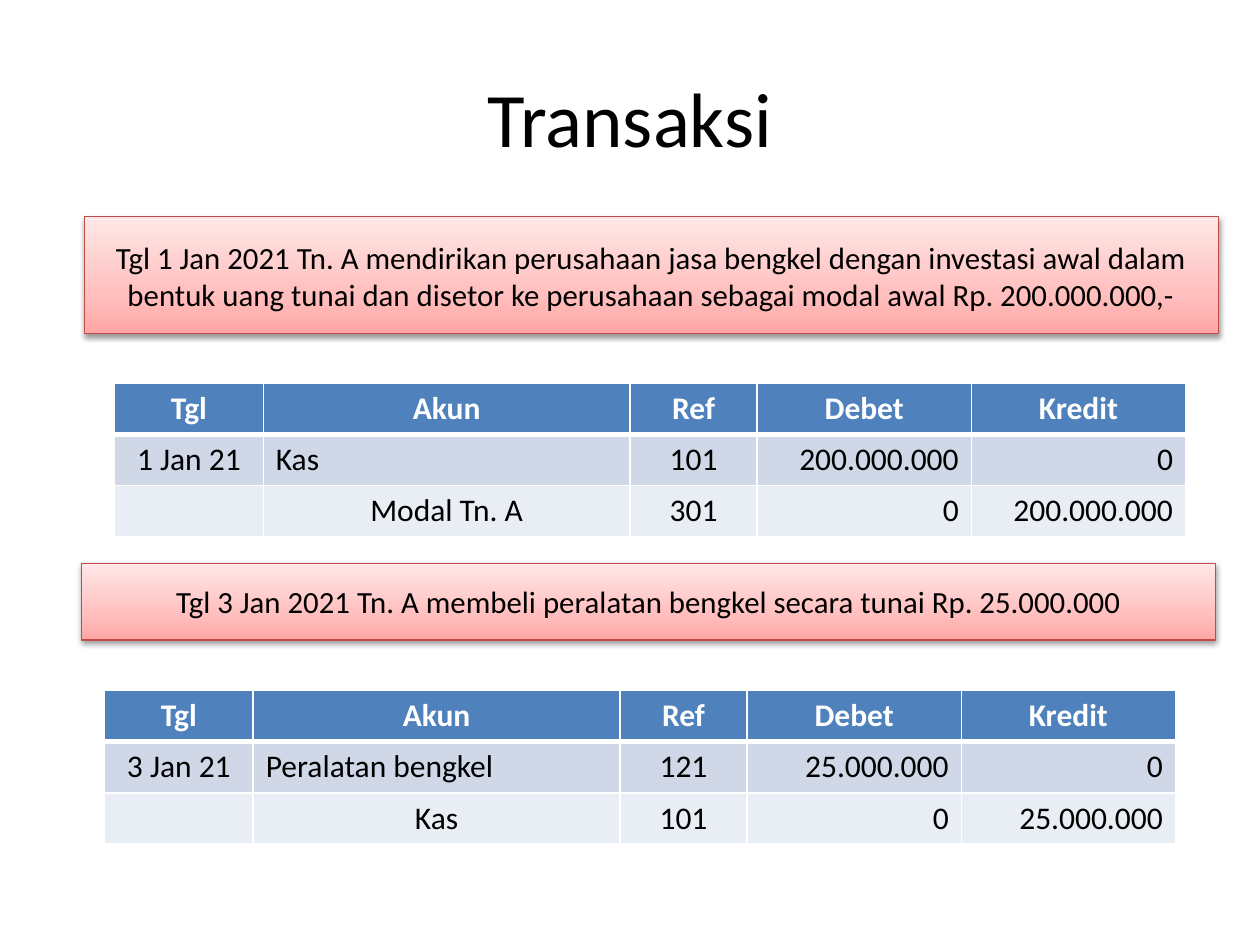
from copy import deepcopy
from dataclasses import dataclass

from lxml.etree import SubElement
from pptx import Presentation
from pptx.dml.color import RGBColor
from pptx.enum.shapes import MSO_SHAPE as Preset
from pptx.enum.text import MSO_ANCHOR as Anchor, PP_ALIGN as Align
from pptx.oxml.ns import qn
from pptx.util import Inches, Pt

GRID_COLUMNS, GRID_ROWS = 100, 75
SLIDE_WIDTH, SLIDE_HEIGHT = Inches(10), Inches(7.5)
FONT = "Calibri"
BLACK, WHITE, HEADER_BLUE = "000000", "FFFFFF", "4F81BD"
BODY_FILLS = ("D0D8E8", "E9EDF4")
BANNER_LINE = "BF4C48"
BANNER_STOPS = ((0, "FFA6A5"), (0.35, "FFC0BF"), (1, "FFE7E7"))
HEADINGS = ("Tgl", "Akun", "Ref", "Debet", "Kredit")
COLUMN_SPANS = (11.8, 29.1, 10.1, 17, 17)
ROW_SPAN = 4.06
ENTRY_ALIGNS = (Align.CENTER, Align.LEFT, Align.CENTER, Align.RIGHT, Align.RIGHT)


@dataclass(frozen=True)
class Area:
    """A place on the slide in grid columns and rows."""
    column: float
    row: float
    columns: float
    rows: float

    def box(self) -> tuple[int, int, int, int]:
        """Return left, top, width and height."""
        return across(self.column), down(self.row), across(self.columns), down(self.rows)


@dataclass(frozen=True)
class Transaction:
    """A described transaction with its two journal entries."""
    description: str
    banner: Area
    journal: Area
    entries: tuple[tuple[str, ...], ...]


TRANSACTIONS = (
    Transaction(
        "Tgl 1 Jan 2021 Tn. A mendirikan perusahaan jasa bengkel dengan investasi awal dalam "
        "bentuk uang tunai dan disetor ke perusahaan sebagai modal awal Rp. 200.000.000,-",
        Area(6.7, 17.2, 90, 9.3), Area(9.1, 30.4, 85, 3 * ROW_SPAN),
        (("1 Jan 21", "Kas", "101", "200.000.000", "0"),
         ("", "Modal Tn. A", "301", "0", "200.000.000"))),
    Transaction(
        "Tgl 3 Jan 2021 Tn. A membeli peralatan bengkel secara tunai Rp. 25.000.000",
        Area(6.5, 44.7, 90, 6.1), Area(8.3, 54.8, 85, 3 * ROW_SPAN),
        (("3 Jan 21", "Peralatan bengkel", "121", "25.000.000", "0"),
         ("", "Kas", "101", "0", "25.000.000"))),
)


def across(columns: float) -> int:
    """Convert grid columns to a length."""
    return round(SLIDE_WIDTH * columns / GRID_COLUMNS)


def down(rows: float) -> int:
    """Convert grid rows to a length."""
    return round(SLIDE_HEIGHT * rows / GRID_ROWS)


def color(hex_code: str) -> RGBColor:
    """Turn a hex string into a colour."""
    return RGBColor.from_string(hex_code)


def write(frame, wording: str, size: float, ink: str = BLACK,
          align: Align = Align.CENTER, bold: bool = False) -> None:
    """Fill a text frame with one formatted paragraph."""
    frame.text = wording
    paragraph = frame.paragraphs[0]
    paragraph.alignment = align
    for run in paragraph.runs:
        run.font.name, run.font.size, run.font.bold = FONT, Pt(size), bold
        run.font.color.rgb = color(ink)


def draw_title(slide, wording: str, area: Area) -> None:
    """Draw the heading of the slide."""
    frame = slide.shapes.add_textbox(*area.box()).text_frame
    frame.word_wrap = True
    frame.vertical_anchor = Anchor.MIDDLE
    write(frame, wording, 44)


def add_shadow(shape) -> None:
    """Give a shape a soft shadow below it."""
    shape.shadow.inherit = False
    effects = shape.element.spPr.find(qn("a:effectLst"))
    shadow = SubElement(effects, qn("a:outerShdw"), blurRad=str(Pt(3.15)),
                        dist=str(Pt(1.57)), dir="5400000", rotWithShape="0")
    shade = SubElement(shadow, qn("a:srgbClr"), val=BLACK)
    SubElement(shade, qn("a:alpha"), val="38000")


def draw_banner(slide, wording: str, area: Area) -> None:
    """Draw the gradient banner that describes a transaction."""
    banner = slide.shapes.add_shape(Preset.RECTANGLE, *area.box())
    banner.fill.gradient()
    banner.fill.gradient_angle = 90
    stop_list = banner.element.spPr.find(".//" + qn("a:gsLst"))
    stop_list.append(deepcopy(stop_list[0]))
    for stop, (position, tint) in zip(banner.fill.gradient_stops, BANNER_STOPS):
        stop.position = position
        stop.color.rgb = color(tint)
    banner.line.color.rgb = color(BANNER_LINE)
    banner.line.width = Pt(0.75)
    add_shadow(banner)
    banner.text_frame.word_wrap = True
    banner.text_frame.vertical_anchor = Anchor.MIDDLE
    write(banner.text_frame, wording, 17.6)


def add_borders(cell, top: float, bottom: float) -> None:
    """Give a cell white borders with the given top and bottom widths."""
    properties = cell._tc.get_or_add_tcPr()
    sides = (("L", 1), ("R", 1), ("T", top), ("B", bottom))
    for index, (side, width) in enumerate(sides):
        border = SubElement(properties, qn(f"a:ln{side}"), w=str(Pt(width)))
        stroke = SubElement(border, qn("a:solidFill"))
        SubElement(stroke, qn("a:srgbClr"), val=WHITE)
        properties.insert(index, border)


def draw_journal(slide, entries: tuple[tuple[str, ...], ...], area: Area) -> None:
    """Draw the journal table, with the credited account centred."""
    lines = (HEADINGS, *entries)
    journal = slide.shapes.add_table(len(lines), len(HEADINGS), *area.box()).table
    for column, span in zip(journal.columns, COLUMN_SPANS):
        column.width = across(span)
    for row_number, line in enumerate(lines):
        journal.rows[row_number].height = down(ROW_SPAN)
        heading = row_number == 0
        for column_number, wording in enumerate(line):
            cell = journal.cell(row_number, column_number)
            credited = row_number == 2 and column_number == 1
            align = Align.CENTER if heading or credited else ENTRY_ALIGNS[column_number]
            write(cell.text_frame, wording, 18, WHITE if heading else BLACK, align, heading)
            cell.fill.solid()
            cell.fill.fore_color.rgb = color(
                HEADER_BLUE if heading else BODY_FILLS[row_number - 1])
            add_borders(cell, 3 if row_number == 1 else 1, 3 if heading else 1)


def main() -> None:
    """Build and save the slide."""
    deck = Presentation()
    deck.slide_width, deck.slide_height = SLIDE_WIDTH, SLIDE_HEIGHT
    slide = deck.slides.add_slide(deck.slide_layouts[6])
    draw_title(slide, "Transaksi", Area(5, 3, 90, 12.5))
    for transaction in TRANSACTIONS:
        draw_banner(slide, transaction.description, transaction.banner)
        draw_journal(slide, transaction.entries, transaction.journal)
    deck.save("out.pptx")


if __name__ == "__main__":
    main()
